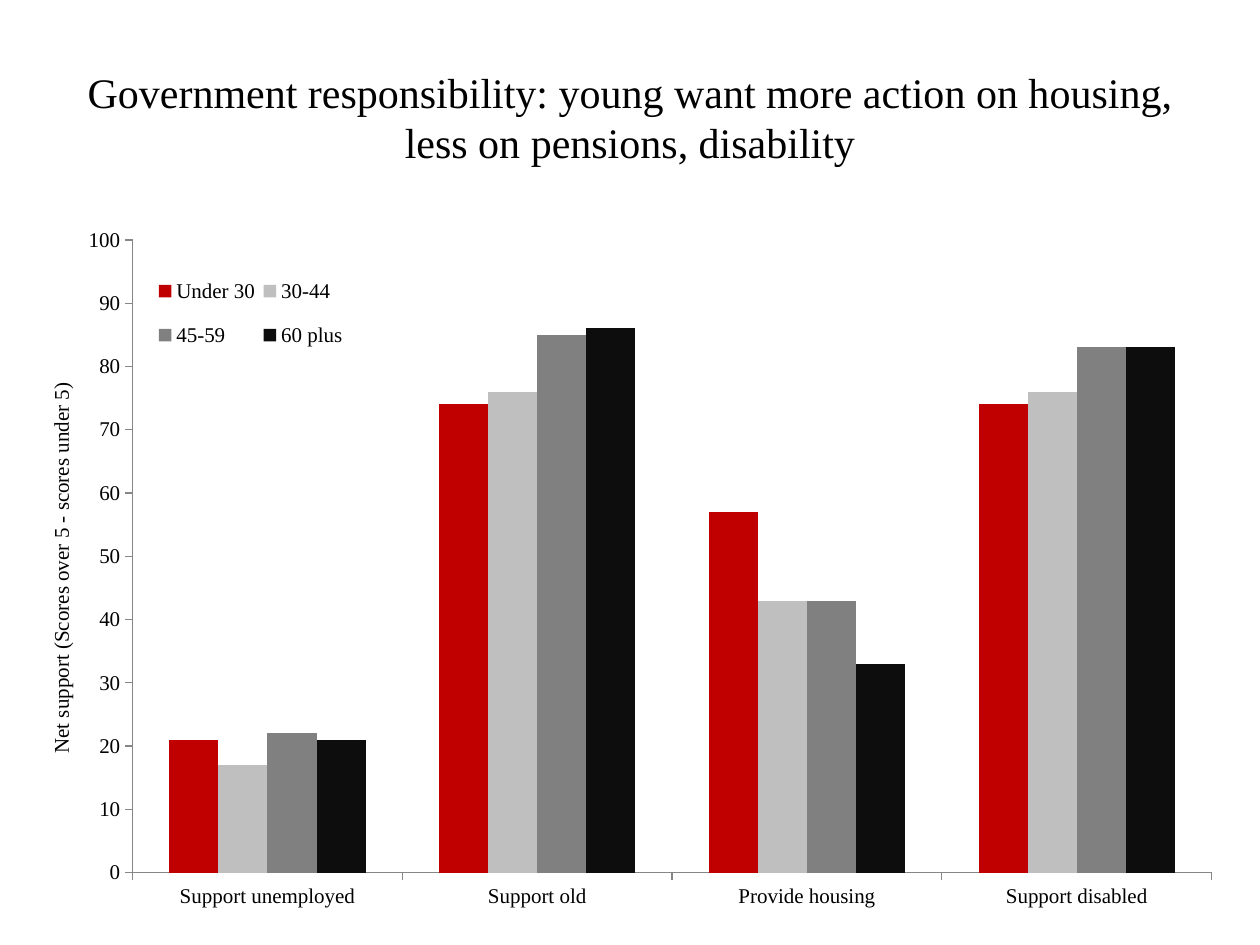
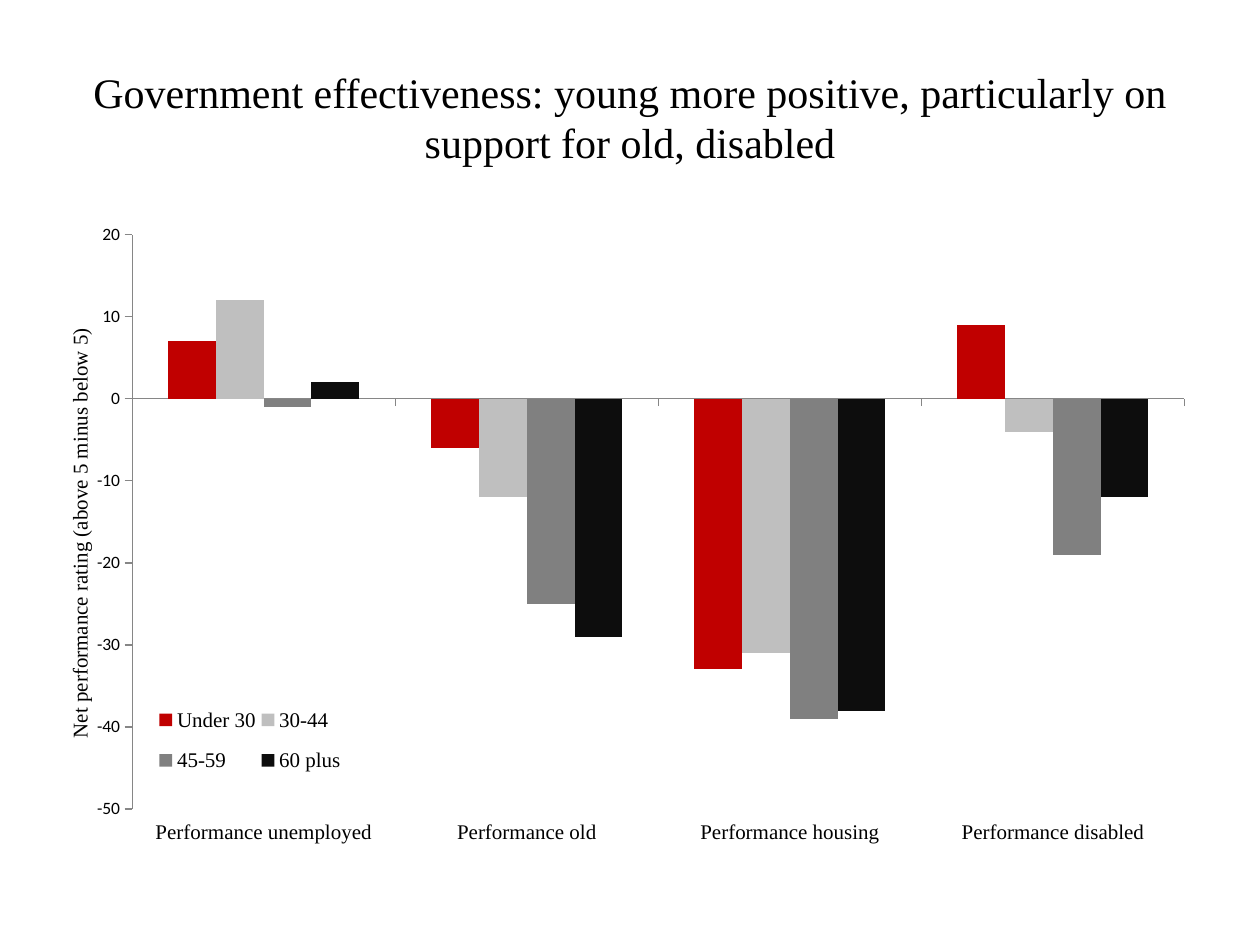
from lxml import etree
from pptx import Presentation
from pptx import util as u
from pptx.chart.data import CategoryChartData
from pptx.dml.color import RGBColor
from pptx.enum import chart as ch, text
from pptx.oxml.ns import qn

COLOURS = {"text": "000000", "axis": "868686", "Under 30": "C00000",
           "30-44": "BFBFBF", "45-59": "808080", "60 plus": "0D0D0D"}
SERIF, SANS = "Times New Roman", "Calibri"
AGE_GROUPS = ["Under 30", "30-44", "45-59", "60 plus"]

SURVEYS = [
    {"title": "Government responsibility: young want more action on housing, "
              "less on pensions, disability",
     "measure": "Net support (Scores over 5 - scores under 5)",
     "answers": {"Support unemployed": (21, 17, 22, 21),
                 "Support old": (74, 76, 85, 86),
                 "Provide housing": (57, 43, 43, 33),
                 "Support disabled": (74, 76, 83, 83)},
     "scale": (0, 100), "scale_font": (SERIF, 12),
     "frame": (0.35, 1.78, 9.37, 5.43),
     "plot": (0.075, 0.023, 0.914, 0.925),
     "key": (0.09, 0.05, 0.17, 0.16)},
    {"title": "Government effectiveness: young more positive, particularly on "
              "support for old, disabled",
     "measure": "Net performance rating (above 5 minus below 5)",
     "answers": {"Performance unemployed": (7, 12, -1, 2),
                 "Performance old": (-6, -12, -25, -29),
                 "Performance housing": (-33, -31, -39, -38),
                 "Performance disabled": (9, -4, -19, -12)},
     "scale": (-50, 20), "scale_font": (SANS, 10),
     "frame": (0.5, 1.75, 9, 4.95),
     "plot": (0.061, 0.023, 0.928, 0.925),
     "key": (0.08, 0.757, 0.17, 0.16)},
]


def rgb(name):
    return RGBColor.from_string(COLOURS[name])


def style(font, face, size):
    font.name, font.size, font.bold = face, u.Pt(size), False
    font.color.rgb = rgb("text")


def place(parent, index, shares, inner=False):
    for old in parent.findall(qn("c:layout")):
        parent.remove(old)
    layout = etree.Element(qn("c:layout"))
    manual = etree.SubElement(layout, qn("c:manualLayout"))
    settings = [("layoutTarget", "inner")] if inner else []
    settings += [("xMode", "edge"), ("yMode", "edge")]
    settings += zip("xywh", shares)
    for tag, value in settings:
        etree.SubElement(manual, qn("c:" + tag)).set("val", str(value))
    parent.insert(index, layout)


def add_title(slide, wording):
    title = slide.shapes.title
    title.left, title.top, title.width, title.height = map(u.Inches, (0.5, 0.3, 9, 1.25))
    frame = title.text_frame
    frame.text = wording
    frame.vertical_anchor = text.MSO_ANCHOR.MIDDLE
    heading = frame.paragraphs[0]
    heading.alignment = text.PP_ALIGN.CENTER
    style(heading.runs[0].font, SERIF, 24)


def style_axis(axis, face, size):
    axis.has_major_gridlines = False
    axis.major_tick_mark = ch.XL_TICK_MARK.OUTSIDE
    axis.minor_tick_mark = ch.XL_TICK_MARK.NONE
    axis.format.line.color.rgb = rgb("axis")
    axis.format.line.width = u.Pt(0.75)
    style(axis.tick_labels.font, face, size)


def add_survey_chart(slide, survey):
    data = CategoryChartData()
    data.categories = list(survey["answers"])
    for group, values in zip(AGE_GROUPS, zip(*survey["answers"].values())):
        data.add_series(group, values)
    chart = slide.shapes.add_chart(ch.XL_CHART_TYPE.COLUMN_CLUSTERED,
                                   *map(u.Inches, survey["frame"]), data).chart
    chart.has_title = False
    style(chart.font, SANS, 10)

    bars = chart.plots[0]
    bars.gap_width, bars.overlap, bars.vary_by_categories = 150, 0, False
    for series in bars.series:
        series.invert_if_negative = False
        series.format.fill.solid()
        series.format.fill.fore_color.rgb = rgb(series.name)

    style_axis(chart.category_axis, SERIF, 12)
    chart.category_axis.tick_label_position = ch.XL_TICK_LABEL_POSITION.LOW
    scale = chart.value_axis
    style_axis(scale, *survey["scale_font"])
    scale.minimum_scale, scale.maximum_scale = survey["scale"]
    scale.major_unit = 10
    measure = scale.axis_title.text_frame
    measure.text = survey["measure"]
    style(measure.paragraphs[0].runs[0].font, SERIF, 12)

    chart.has_legend = True
    key = chart.legend
    key.position = ch.XL_LEGEND_POSITION.RIGHT
    key.include_in_layout = False
    style(key.font, SERIF, 12)
    legend = chart.element.find(".//" + qn("c:legend"))
    place(legend, 1, survey["key"])
    place(chart.element.find(".//" + qn("c:plotArea")), 0, survey["plot"], inner=True)


def main():
    deck = Presentation()
    deck.slide_width, deck.slide_height = u.Inches(10), u.Inches(7.5)
    for survey in SURVEYS:
        slide = deck.slides.add_slide(deck.slide_layouts[5])
        add_title(slide, survey["title"])
        add_survey_chart(slide, survey)
    deck.save("out.pptx")


if __name__ == "__main__":
    main()
